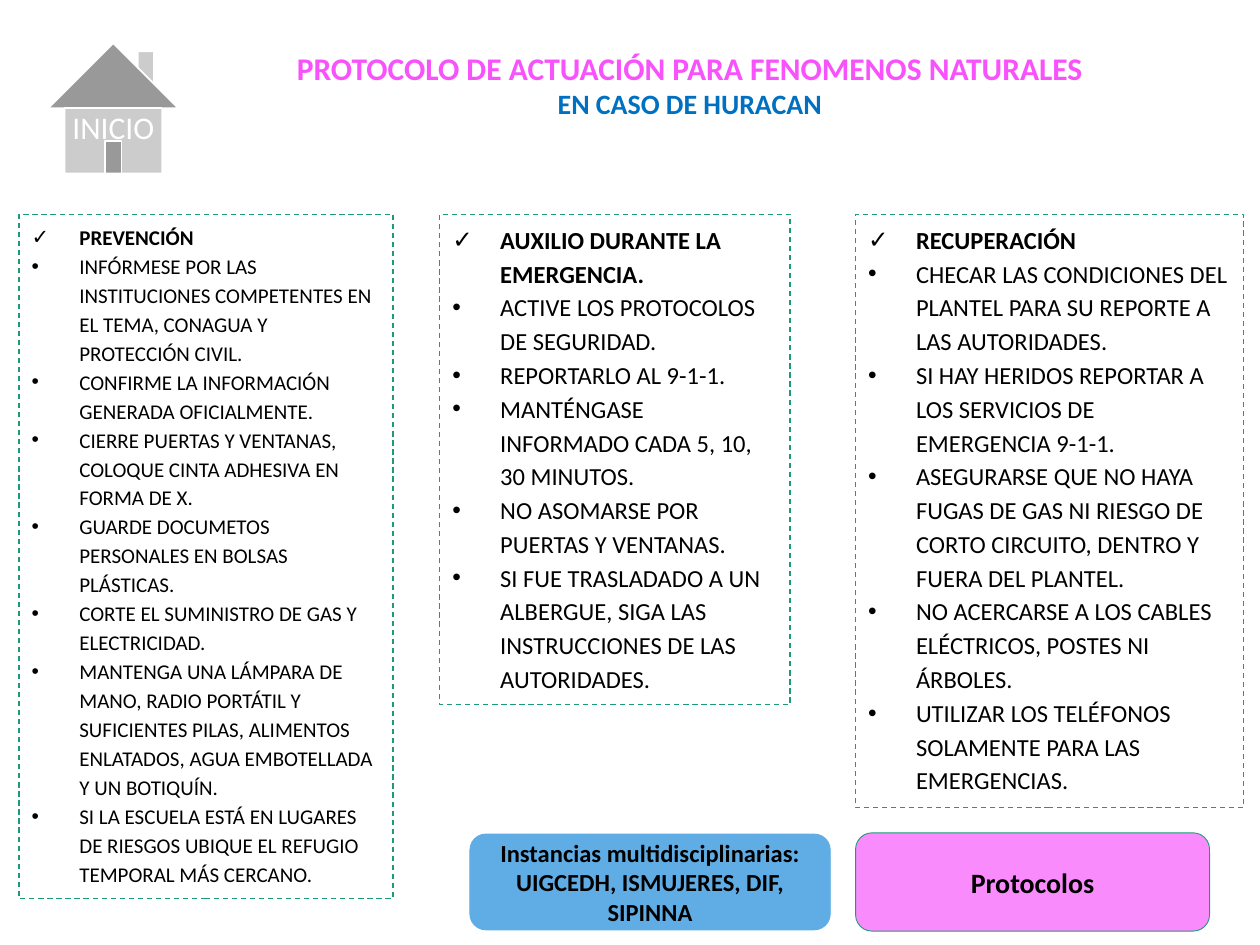
import pptx
import pptx.util
import pptx.dml.color
import pptx.enum.dml
import pptx.enum.shapes
import pptx.enum.text
import pptx.oxml
import pptx.oxml.ns
import lxml.etree

RGB = pptx.dml.color.RGBColor
SHAPE = pptx.enum.shapes.MSO_SHAPE
ALIGN = pptx.enum.text.PP_ALIGN
ANCHOR = pptx.enum.text.MSO_ANCHOR
FIT = pptx.enum.text.MSO_AUTO_SIZE
Inches, Pt = pptx.util.Inches, pptx.util.Pt

PINK = RGB(0xF8, 0x52, 0xFC)
LIGHT_PINK = RGB(0xFA, 0x8B, 0xFD)
BLUE = RGB(0x00, 0x70, 0xC0)
LIGHT_BLUE = RGB(0x5F, 0xAD, 0xE4)
GREEN = RGB(0x1D, 0x9A, 0x78)
BLACK = RGB(0, 0, 0)
WHITE = RGB(255, 255, 255)

WIDTH, HEIGHT = 10, 7.5
COLUMN_TOP = 1.7
RIGHT_COLUMN = 6.79  # shared by the last list and the button below it
INDENT = 0.38

# Each list: left, width, height, text size, heading, items
COLUMNS = [
    (0.15, 2.97, 5.43, 12, "PREVENCIÓN", [
        "INFÓRMESE POR LAS INSTITUCIONES COMPETENTES EN EL TEMA, CONAGUA Y PROTECCIÓN CIVIL.",
        "CONFIRME LA INFORMACIÓN GENERADA OFICIALMENTE.",
        "CIERRE PUERTAS Y VENTANAS, COLOQUE CINTA ADHESIVA EN FORMA DE X.",
        "GUARDE DOCUMETOS PERSONALES EN BOLSAS PLÁSTICAS.",
        "CORTE EL SUMINISTRO DE GAS Y ELECTRICIDAD.",
        "MANTENGA UNA LÁMPARA DE MANO, RADIO PORTÁTIL Y SUFICIENTES PILAS, "
        "ALIMENTOS ENLATADOS, AGUA EMBOTELLADA Y UN BOTIQUÍN.",
        "SI LA ESCUELA ESTÁ EN LUGARES DE RIESGOS UBIQUE EL REFUGIO TEMPORAL MÁS CERCANO.",
    ]),
    (3.49, 2.78, 3.89, 14, "AUXILIO DURANTE LA EMERGENCIA.", [
        "ACTIVE LOS PROTOCOLOS DE SEGURIDAD.",
        "REPORTARLO AL 9-1-1.",
        "MANTÉNGASE INFORMADO CADA 5, 10, 30 MINUTOS.",
        "NO ASOMARSE POR PUERTAS Y VENTANAS.",
        "SI FUE TRASLADADO A UN ALBERGUE, SIGA LAS INSTRUCCIONES DE LAS AUTORIDADES.",
    ]),
    (RIGHT_COLUMN, 3.08, 4.71, 14, "RECUPERACIÓN", [
        "CHECAR LAS CONDICIONES DEL PLANTEL PARA SU REPORTE A LAS AUTORIDADES.",
        "SI HAY HERIDOS REPORTAR A LOS SERVICIOS DE EMERGENCIA 9-1-1.",
        "ASEGURARSE QUE NO HAYA FUGAS DE GAS NI RIESGO DE CORTO CIRCUITO, "
        "DENTRO Y FUERA DEL PLANTEL.",
        "NO ACERCARSE A LOS CABLES ELÉCTRICOS, POSTES NI ÁRBOLES.",
        "UTILIZAR LOS TELÉFONOS SOLAMENTE PARA LAS EMERGENCIAS.",
    ]),
]


def place(sp, box):
    sp.left, sp.top, sp.width, sp.height = [Inches(v) for v in box]


def style(p, size, color, bold):
    for r in p.runs:
        r.font.name = "Calibri"
        r.font.size = Pt(size)
        r.font.bold = bold
        r.font.color.rgb = color


def set_bullet(p, char):
    pPr = p._p.get_or_add_pPr()
    pPr.set("marL", str(Inches(INDENT)))
    pPr.set("indent", str(-Inches(INDENT)))
    font = lxml.etree.SubElement(pPr, pptx.oxml.ns.qn("a:buFont"))
    font.set("typeface", "Arial")
    lxml.etree.SubElement(pPr, pptx.oxml.ns.qn("a:buChar")).set("char", char)


def add_heading(sp, box):
    place(sp, box)
    tf = sp.text_frame
    tf.text = "PROTOCOLO DE ACTUACIÓN PARA FENOMENOS NATURALES\nEN CASO DE HURACAN"
    tf.word_wrap = True
    tf.auto_size = FIT.NONE
    tf.vertical_anchor = ANCHOR.TOP
    for p, size, color in zip(tf.paragraphs, (18, 16), (PINK, BLUE)):
        p.alignment = ALIGN.CENTER
        style(p, size, color, True)


def add_list(sp, box, size, heading, items):
    place(sp, box)
    sp.line.color.rgb = GREEN
    sp.line.width = Pt(0.75)
    sp.line.dash_style = pptx.enum.dml.MSO_LINE.DASH
    tf = sp.text_frame
    tf.text = "\n".join([heading] + items)
    tf.word_wrap = True
    tf.auto_size = FIT.NONE  # keeps the room below the last line
    tf.vertical_anchor = ANCHOR.TOP
    for i, p in enumerate(tf.paragraphs):
        p.alignment = ALIGN.LEFT
        p.line_spacing = 1.15
        p.space_before = Pt(0)
        p.space_after = Pt(10 if i == len(items) else 0)
        set_bullet(p, "•" if i else "✓")
        style(p, size, BLACK, i == 0)


def add_button(s, kind, box, text, size, fill, line, line_width, color=BLACK, bold=True):
    sp = s.shapes.add_shape(kind, *[Inches(v) for v in box])
    sp.shadow.inherit = False
    sp.fill.solid()
    sp.fill.fore_color.rgb = fill
    sp.line.color.rgb = line
    sp.line.width = Pt(line_width)
    tf = sp.text_frame
    tf.text = text
    tf.word_wrap = True
    tf.vertical_anchor = ANCHOR.MIDDLE
    p = tf.paragraphs[0]
    p.alignment = ALIGN.CENTER
    style(p, size, color, bold)
    return sp


def main():
    prs = pptx.Presentation()
    prs.slide_width, prs.slide_height = Inches(WIDTH), Inches(HEIGHT)
    s = prs.slides.add_slide(prs.slide_layouts.get_by_name("Comparison"))

    # Title and the three lists
    add_heading(s.shapes.title, (1.78, 0.34, 7.39, 0.67))
    bodies = list(s.placeholders)[1:]
    for sp, (left, width, height, size, heading, items) in zip(bodies, COLUMNS):
        add_list(sp, (left, COLUMN_TOP, width, height), size, heading, items)
    for sp in bodies[len(COLUMNS):]:
        sp.element.getparent().remove(sp.element)

    # Navigation buttons
    add_button(s, SHAPE.ROUNDED_RECTANGLE, (RIGHT_COLUMN, 6.61, 2.81, 0.78),
               "Protocolos", 16, LIGHT_PINK, GREEN, 0.5)
    add_button(s, SHAPE.ROUNDED_RECTANGLE, (3.73, 6.62, 2.86, 0.76),
               "Instancias multidisciplinarias: UIGCEDH, ISMUJERES, DIF, SIPINNA",
               14, LIGHT_BLUE, LIGHT_BLUE, 0.5)
    home = add_button(s, SHAPE.ACTION_BUTTON_HOME, (0.21, 0.1, 1.38, 1.52),
                      "INICIO", 18, WHITE, WHITE, 1, WHITE, False)
    home.text_frame.margin_top = Inches(0.35)  # lowers the label onto the house wall

    prs.save("out.pptx")


if __name__ == "__main__":
    main()
